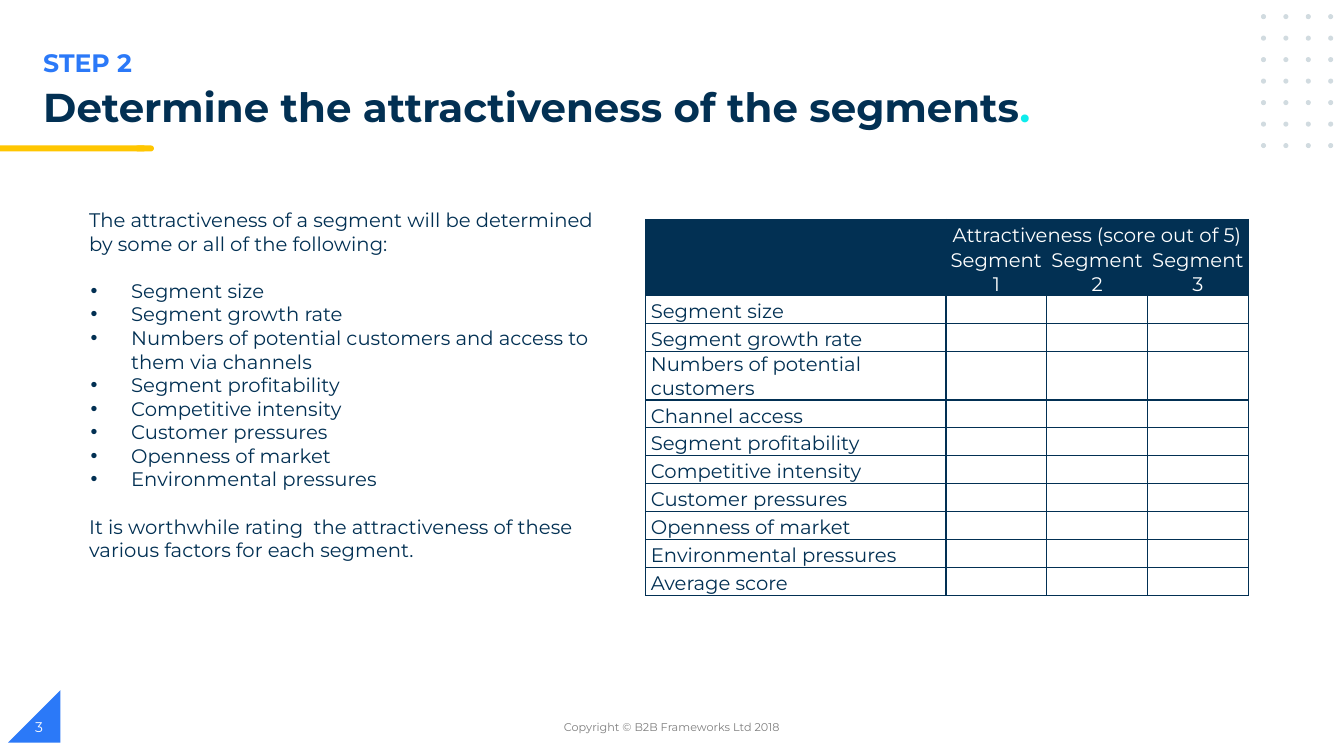
from lxml import etree
from pptx import Presentation
from pptx.dml.color import RGBColor
from pptx.enum import shapes, text
from pptx.oxml import ns
from pptx.util import Pt

NAVY = RGBColor(0x02, 0x30, 0x53)
BLUE = RGBColor(0x2B, 0x79, 0xF8)
CYAN = RGBColor(0x0E, 0xEC, 0xEC)
YELLOW = RGBColor(0xFF, 0xC6, 0x00)
DOT_GREY = RGBColor(0xD1, 0xDB, 0xE0)
FOOTER_GREY = RGBColor(0x7F, 0x7F, 0x7F)
WHITE = RGBColor(0xFF, 0xFF, 0xFF)
FONT = "Montserrat"
BODY_SIZE = 14

FACTORS = [
    "Segment size", "Segment growth rate",
    "Numbers of potential customers and access to them via channels",
    "Segment profitability", "Competitive intensity", "Customer pressures",
    "Openness of market", "Environmental pressures",
]
SCORE_ROWS = [
    "Segment size", "Segment growth rate", "Numbers of potential customers",
    "Channel access", "Segment profitability", "Competitive intensity",
    "Customer pressures", "Openness of market", "Environmental pressures",
    "Average score",
]
SEGMENTS = ["Segment 1", "Segment 2", "Segment 3"]


def write(paragraph, words, size=BODY_SIZE, color=NAVY, bold=False, align=None):
    """Append a formatted run to the paragraph."""
    run = paragraph.add_run()
    run.text = words
    run.font.name = FONT
    run.font.size = Pt(size)
    run.font.bold = bold
    run.font.color.rgb = color
    if align is not None:
        paragraph.alignment = align


def add_frame(slide, left, top, width, height, anchor=text.MSO_ANCHOR.TOP):
    box = slide.shapes.add_textbox(Pt(left), Pt(top), Pt(width), Pt(height))
    frame = box.text_frame
    frame.word_wrap = True
    frame.vertical_anchor = anchor
    return frame


def add_solid(slide, kind, left, top, width, height, color):
    solid = slide.shapes.add_shape(kind, Pt(left), Pt(top), Pt(width), Pt(height))
    solid.shadow.inherit = False
    solid.fill.solid()
    solid.fill.fore_color.rgb = color
    solid.line.fill.background()
    return solid


def indent(paragraph, left, hanging=0, bullet=None):
    props = paragraph._p.get_or_add_pPr()
    props.set("marL", str(Pt(left)))
    props.set("indent", str(Pt(-hanging)))
    if bullet:
        color = etree.SubElement(props, ns.qn("a:buClr"))
        etree.SubElement(color, ns.qn("a:srgbClr"), val=str(NAVY))
        etree.SubElement(props, ns.qn("a:buFont"), typeface="Arial")
        etree.SubElement(props, ns.qn("a:buChar"), char=bullet)


def dot_grid(slide, left, top, columns=4, rows=7):
    for row in range(rows):
        for column in range(columns):
            add_solid(slide, shapes.MSO_SHAPE.OVAL, left + 16 * column,
                      top + 15.35 * row, 3.6, 3.6, DOT_GREY)


def heading(slide, left, top, width):
    step = add_frame(slide, left, top, 482, 29)
    write(step.paragraphs[0], "STEP 2", 18, BLUE, bold=True)
    title = add_frame(slide, left, top + 28.8, width, 40).paragraphs[0]
    title.line_spacing = 0.9
    write(title, "Determine the attractiveness of the segments", 28.8, bold=True)
    write(title, ".", 28.8, CYAN, bold=True)


def underline(slide, top, width, height):
    cap = 13.6
    add_solid(slide, shapes.MSO_SHAPE.FLOWCHART_TERMINATOR,
              width - cap, top, cap, height, YELLOW)
    add_solid(slide, shapes.MSO_SHAPE.RECTANGLE,
              0, top, width - cap / 2, height, YELLOW)


def factor_list(slide, left, top, width, height):
    gap = Pt(17)
    frame = add_frame(slide, left, top, width, height)
    write(frame.paragraphs[0], "The attractiveness of a segment will be "
          "determined by some or all of the following:")
    for number, factor in enumerate(FACTORS):
        item = frame.add_paragraph()
        indent(item, 30, 29, "•")
        if number == 0:
            item.space_before = gap
        write(item, factor)
    closing = frame.add_paragraph()
    closing.space_before = gap
    write(closing, "It is worthwhile rating  the attractiveness of these "
          "various factors for each segment.")


def style_cell(cell, header):
    cell.margin_left = cell.margin_right = cell.margin_top = Pt(0.7)
    cell.margin_bottom = 0
    cell.vertical_anchor = text.MSO_ANCHOR.BOTTOM
    if header:
        cell.fill.solid()
        cell.fill.fore_color.rgb = NAVY
    else:
        cell.fill.background()
    props = cell._tc.get_or_add_tcPr()
    for place, side in enumerate(("a:lnL", "a:lnR", "a:lnT", "a:lnB")):
        border = etree.Element(ns.qn(side), w=str(Pt(1)))
        fill = etree.SubElement(border, ns.qn("a:solidFill"))
        etree.SubElement(fill, ns.qn("a:srgbClr"), val=str(NAVY))
        props.insert(place, border)
    # Keeps empty cells from growing beyond the row height
    etree.SubElement(cell.text_frame.paragraphs[0]._p, ns.qn("a:endParaRPr"),
                     sz=str(BODY_SIZE * 100))


def score_table(slide, left, top, label_width, score_width):
    row_height, two_line_height = 20, 34.5
    row_count, column_count = len(SCORE_ROWS) + 2, len(SEGMENTS) + 1
    frame = slide.shapes.add_table(
        row_count, column_count, Pt(left), Pt(top),
        Pt(label_width + score_width * len(SEGMENTS)), Pt(row_height * row_count))
    table = frame.table
    table.first_row = table.horz_banding = False
    for number, column in enumerate(table.columns):
        column.width = Pt(score_width if number else label_width)
    two_line_rows = (1, 2 + SCORE_ROWS.index("Numbers of potential customers"))
    for number, row in enumerate(table.rows):
        row.height = Pt(two_line_height if number in two_line_rows else row_height)
        for cell in row.cells:
            style_cell(cell, header=number < 2)
    table.cell(0, 0).merge(table.cell(1, 0))
    table.cell(0, 1).merge(table.cell(0, column_count - 1))

    centre = text.PP_ALIGN.CENTER
    write(table.cell(0, 1).text_frame.paragraphs[0],
          "Attractiveness (score out of 5)", color=WHITE, align=centre)
    for number, segment in enumerate(SEGMENTS, 1):
        write(table.cell(1, number).text_frame.paragraphs[0], segment,
              color=WHITE, align=centre)
    for number, label in enumerate(SCORE_ROWS, 2):
        paragraph = table.cell(number, 0).text_frame.paragraphs[0]
        indent(paragraph, 3)
        write(paragraph, label)


def footer(slide, top):
    corner = add_solid(slide, shapes.MSO_SHAPE.RIGHT_TRIANGLE,
                       5.8, top - 12.2, 37.4, 37.4, BLUE)
    corner._element.spPr.xfrm.set("flipH", "1")
    middle = text.MSO_ANCHOR.MIDDLE
    notice = add_frame(slide, 318, top, 324, 28.8, middle)
    write(notice.paragraphs[0], "Copyright © B2B Frameworks Ltd 2018", 8,
          FOOTER_GREY, align=text.PP_ALIGN.CENTER)
    page = add_frame(slide, 18, top, 216, 28.8, middle)
    write(page.paragraphs[0], "3", 10, WHITE)


def main():
    deck = Presentation()
    deck.slide_width, deck.slide_height = Pt(960), Pt(540)
    slide = deck.slides.add_slide(deck.slide_layouts[6])
    dot_grid(slide, 900.7, 10.1)
    underline(slide, 103.9, 110, 4.3)
    heading(slide, 23.8, 30.4, 809)
    factor_list(slide, 56.6, 145, 376.6, 262)
    score_table(slide, 461.2, 156.7, 214.5, 72)
    footer(slide, 505.2)
    deck.save("out.pptx")


if __name__ == "__main__":
    main()
